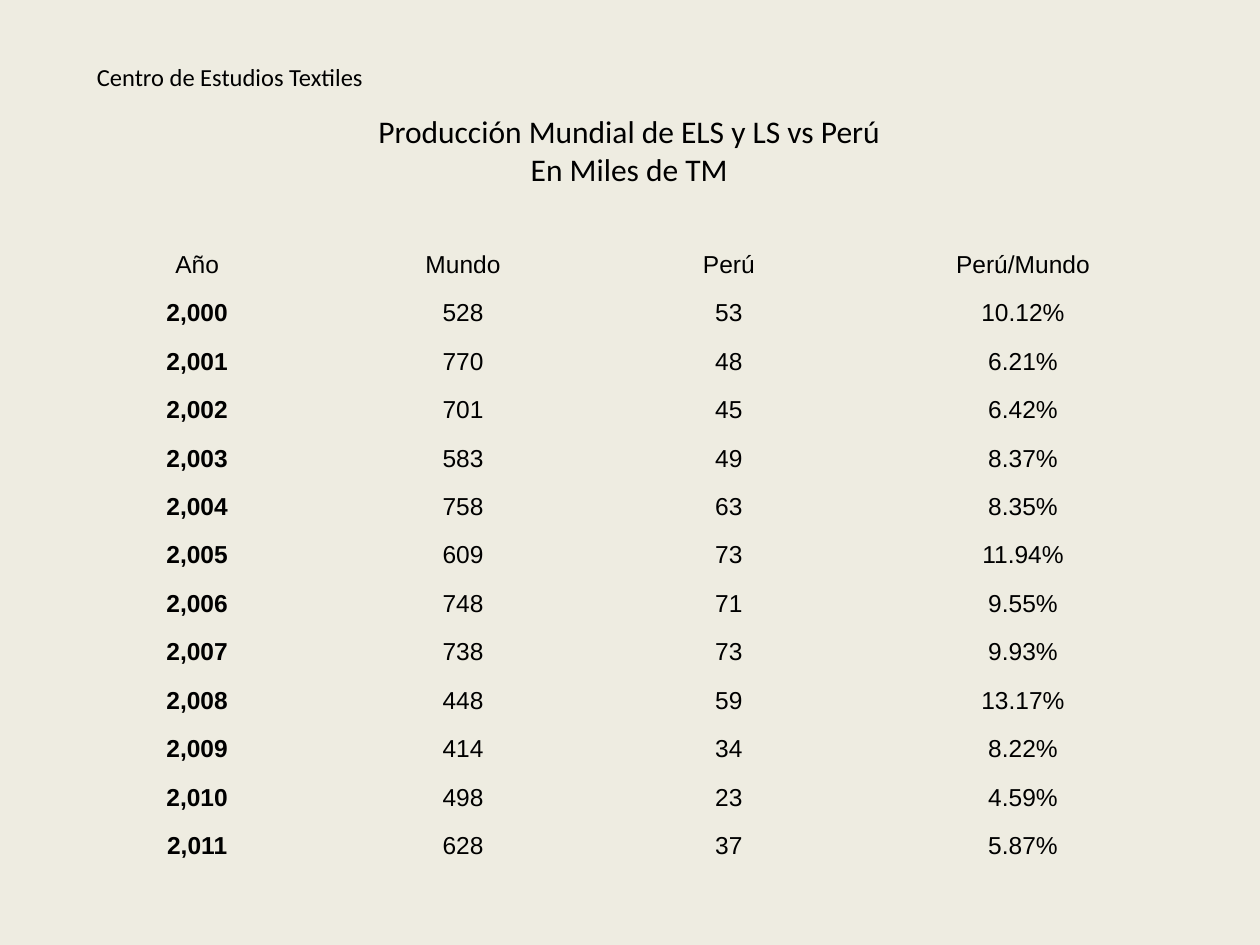
from pptx import Presentation
from pptx.dml.color import RGBColor
from pptx.enum.text import MSO_ANCHOR, MSO_AUTO_SIZE, PP_ALIGN
from pptx.oxml.ns import qn
from pptx.util import Inches, Pt

COLORS = {"background": "EEECE1", "text": "000000"}
NO_STYLE_NO_GRID = "{2D5ABB26-0587-4C30-8999-92F81FD0307C}"

HEADERS = ["Año", "Mundo", "Perú", "Perú/Mundo"]
PRODUCTION = [
    ("2,000", "528", "53", "10.12%"),
    ("2,001", "770", "48", "6.21%"),
    ("2,002", "701", "45", "6.42%"),
    ("2,003", "583", "49", "8.37%"),
    ("2,004", "758", "63", "8.35%"),
    ("2,005", "609", "73", "11.94%"),
    ("2,006", "748", "71", "9.55%"),
    ("2,007", "738", "73", "9.93%"),
    ("2,008", "448", "59", "13.17%"),
    ("2,009", "414", "34", "8.22%"),
    ("2,010", "498", "23", "4.59%"),
    ("2,011", "628", "37", "5.87%"),
]
COLUMN_WIDTHS = [2.11, 2.11, 2.11, 2.56]
HEADER_HEIGHT, ROW_HEIGHT = 0.66, 0.385


def format_text(tf, font, size, align, bold=False):
    for p in tf.paragraphs:
        p.alignment = align
        for r in p.runs:
            r.font.name = font
            r.font.size = Pt(size)
            r.font.bold = bold
            r.font.color.rgb = RGBColor.from_string(COLORS["text"])


prs = Presentation()
prs.slide_width, prs.slide_height = Inches(10), Inches(7.5)
s = prs.slides.add_slide(prs.slide_layouts[5])
s.background.fill.solid()
s.background.fill.fore_color.rgb = RGBColor.from_string(COLORS["background"])

# Title
title = s.shapes.title
title.left, title.top = Inches(2.88), Inches(0.84)
title.width, title.height = Inches(4.23), Inches(0.71)
tf = title.text_frame
tf.text = "Producción Mundial de ELS y LS vs Perú\nEn Miles de TM"
tf.word_wrap = False
tf.auto_size = MSO_AUTO_SIZE.SHAPE_TO_FIT_TEXT
tf.vertical_anchor = MSO_ANCHOR.TOP
format_text(tf, "Calibri", 18, PP_ALIGN.CENTER)

# Production table
rows = [HEADERS, *PRODUCTION]
frame = s.shapes.add_table(
    len(rows), len(HEADERS), Inches(0.51), Inches(1.55),
    Inches(sum(COLUMN_WIDTHS)), Inches(HEADER_HEIGHT + ROW_HEIGHT * len(PRODUCTION)))
table = frame.table
table.first_row = table.horz_banding = False
next(frame._element.iter(qn("a:tableStyleId"))).text = NO_STYLE_NO_GRID
for column, width in zip(table.columns, COLUMN_WIDTHS):
    column.width = Inches(width)
for i, values in enumerate(rows):
    table.rows[i].height = Inches(ROW_HEIGHT if i else HEADER_HEIGHT)
    for j, value in enumerate(values):
        cell = table.cell(i, j)
        cell.text = value
        cell.fill.background()
        cell.vertical_anchor = MSO_ANCHOR.BOTTOM
        cell.margin_left = cell.margin_right = cell.margin_top = Inches(0.01)
        cell.margin_bottom = 0
        format_text(cell.text_frame, "Arial", 14, PP_ALIGN.CENTER, bold=i > 0 and j == 0)

# Institute name
institute = s.shapes.add_textbox(Inches(0.67), Inches(0.44), Inches(2.59), Inches(0.34))
tf = institute.text_frame
tf.text = "Centro de Estudios Textiles"
tf.word_wrap = False
tf.auto_size = MSO_AUTO_SIZE.NONE
format_text(tf, "Calibri", 14, PP_ALIGN.LEFT)

prs.save("out.pptx")
